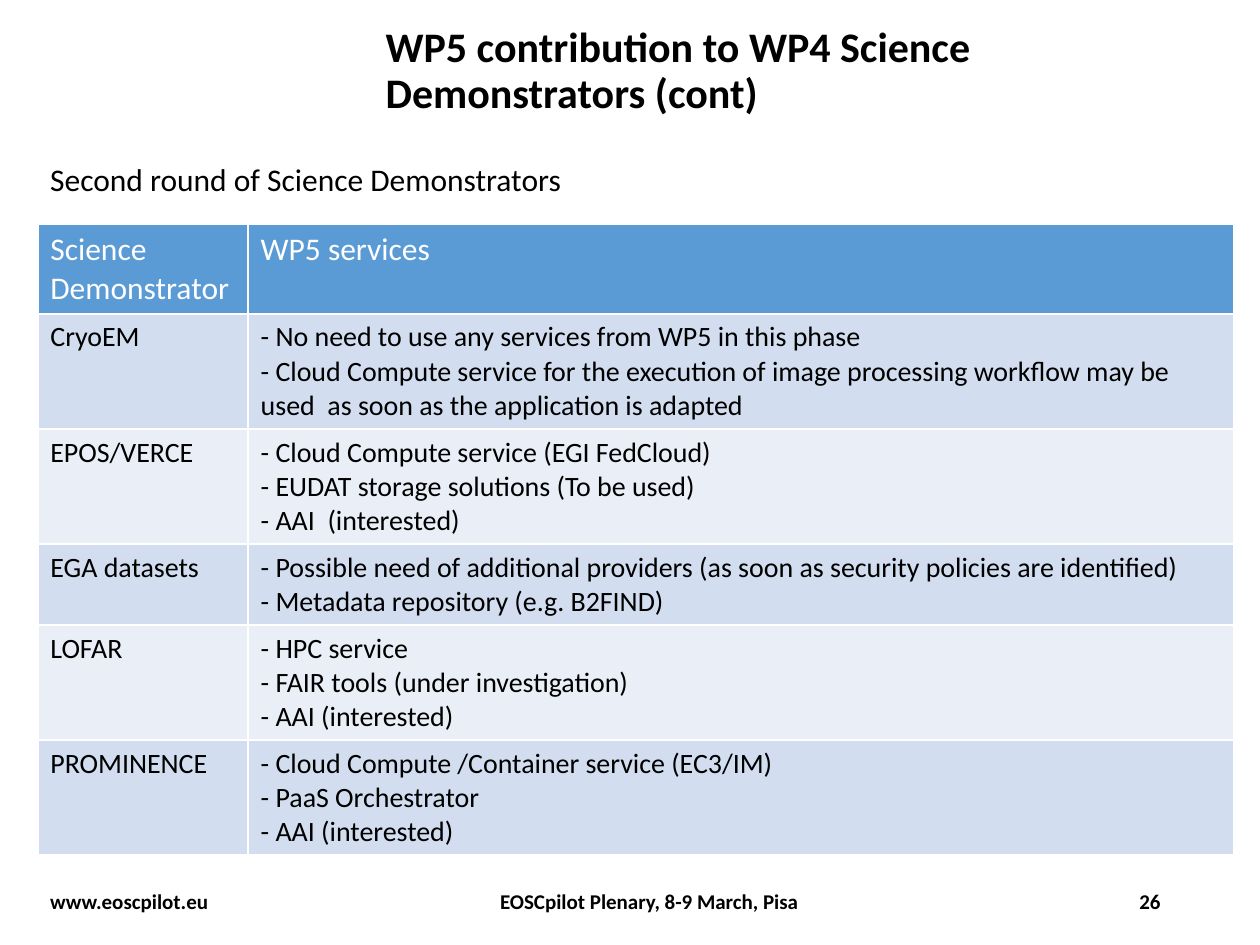
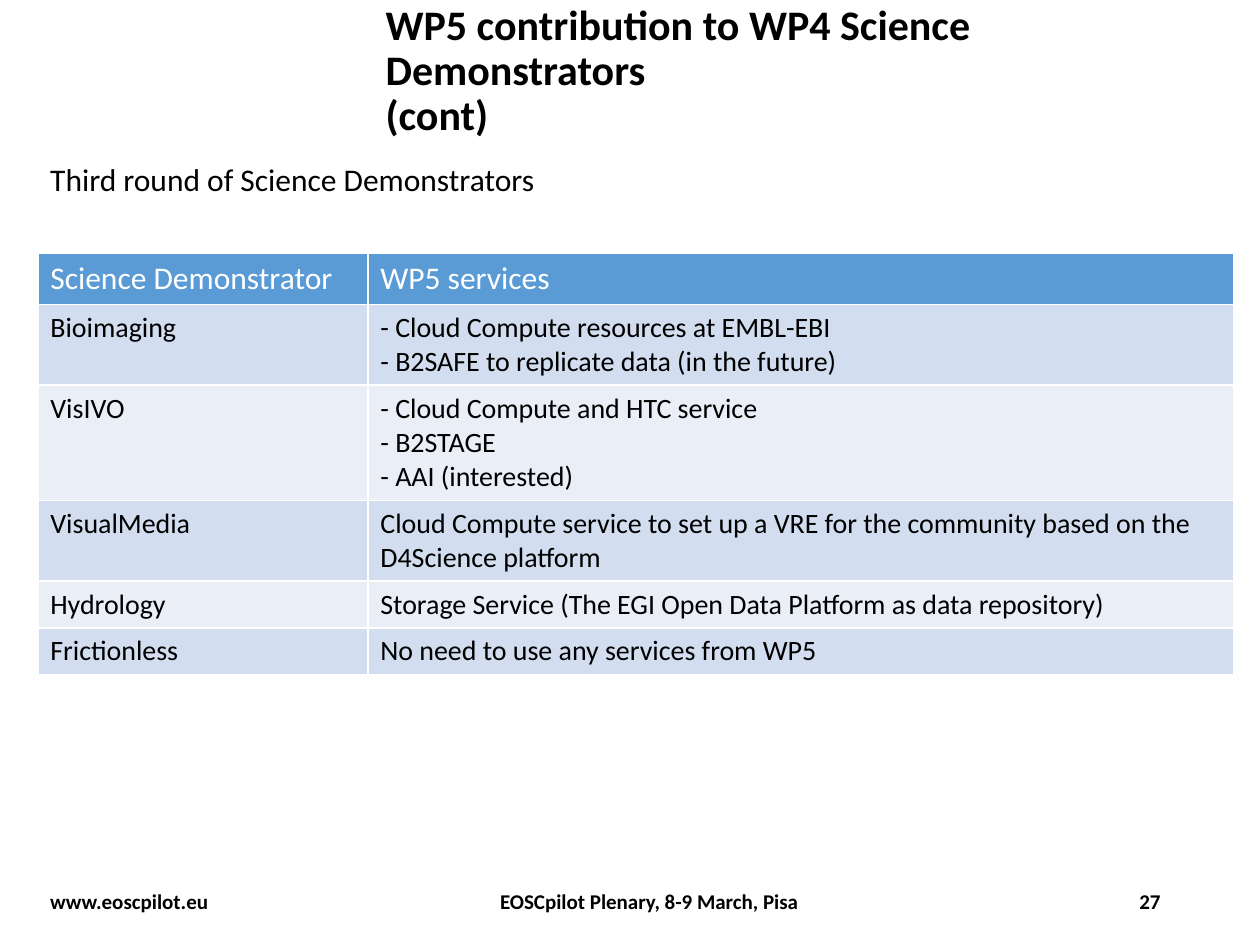
"""Build two slides that list the WP5 services used by the Science Demonstrators."""
import pptx
import pptx.dml.color
import pptx.enum.text
import pptx.util

Pt = pptx.util.Pt
ALIGN = pptx.enum.text.PP_ALIGN
ANCHOR = pptx.enum.text.MSO_ANCHOR

COLOURS = {
    "text": "000000",
    "header_text": "FFFFFF",
    "header": "5B9BD5",
    "odd_row": "D2DEEF",
    "even_row": "EAEFF7",
}
FONT = "Calibri"
LEFT = 21.6
TABLE_WIDTH = 683.3
CELL_MARGINS = 7.2
BODY_LINE = 19.53
HEADER_LINE = 22
TITLE_ONLY_LAYOUT = 5
FIRST_NUMBER = 26
HEADINGS = ["Science Demonstrator", "WP5 services"]

SLIDES = [
    {
        "title": ["WP5 contribution to WP4 Science Demonstrators (cont)"],
        "subtitle": "Second round of Science Demonstrators",
        "table_top": 128.2,
        "name_width": 120.2,
        "header_lines": 2,
        "rows": [
            ("CryoEM", 3, [
                "- No need to use any services from WP5 in this phase",
                "- Cloud Compute service for the execution of image processing "
                "workflow may be used  as soon as the application is adapted"]),
            ("EPOS/VERCE", 3, [
                "- Cloud Compute service (EGI FedCloud)",
                "- EUDAT storage solutions (To be used)",
                "- AAI  (interested)"]),
            ("EGA datasets", 2, [
                "- Possible need of additional providers (as soon as security "
                "policies are identified)",
                "- Metadata repository (e.g. B2FIND)"]),
            ("LOFAR", 3, [
                "- HPC service",
                "- FAIR tools (under investigation)",
                "- AAI (interested)"]),
            ("PROMINENCE", 3, [
                "- Cloud Compute /Container service (EC3/IM)",
                "- PaaS Orchestrator",
                "- AAI (interested)"]),
        ],
    },
    {
        "title": ["WP5 contribution to WP4 Science Demonstrators", "(cont)"],
        "subtitle": "Third round of Science Demonstrators",
        "table_top": 144.7,
        "name_width": 188.6,
        "header_lines": 1,
        "rows": [
            ("Bioimaging", 2, [
                "- Cloud Compute resources at EMBL-EBI",
                "- B2SAFE to replicate data (in the future)"]),
            ("VisIVO", 3, [
                "- Cloud Compute and HTC service",
                "- B2STAGE",
                "- AAI (interested)"]),
            ("VisualMedia", 2, [
                "Cloud Compute service to set up a VRE for the community based "
                "on the D4Science platform"]),
            ("Hydrology", 1, [
                "Storage Service (The EGI Open Data Platform as data repository)"]),
            ("Frictionless", 1, ["No need to use any services from WP5"]),
        ],
    },
]


def colour(name):
    return pptx.dml.color.RGBColor.from_string(COLOURS[name])


def write_text(frame, lines, size=16, bold=False, ink="text",
               align=ALIGN.LEFT, spacing=None):
    frame.word_wrap = True
    for index, line in enumerate(lines):
        para = frame.add_paragraph() if index else frame.paragraphs[0]
        para.alignment = align
        if spacing:
            para.line_spacing = spacing
        span = para.add_run()
        span.text = line
        span.font.name = FONT
        span.font.size = Pt(size)
        span.font.bold = bold
        span.font.color.rgb = colour(ink)


def add_title(page, lines):
    title = page.shapes.title
    title.left, title.top = Pt(213.1), Pt(11.5)
    title.width, title.height = Pt(492.5), Pt(59)
    frame = title.text_frame
    frame.auto_size = pptx.enum.text.MSO_AUTO_SIZE.NONE
    frame.vertical_anchor = ANCHOR.MIDDLE
    write_text(frame, lines, size=24, bold=True, spacing=0.9)


def add_text_box(page, text, left, top, width, anchor=ANCHOR.TOP, **style):
    box = page.shapes.add_textbox(Pt(left), Pt(top), Pt(width), Pt(29))
    box.text_frame.vertical_anchor = anchor
    write_text(box.text_frame, [text], **style)


def add_footer(page, number):
    for text, left, width, align in (
        ("www.eoscpilot.eu", LEFT, 106.6, ALIGN.LEFT),
        ("EOSCpilot Plenary, 8-9 March, Pisa", 170.6, 401, ALIGN.CENTER),
        (str(number), 627.1, 43.2, ALIGN.RIGHT),
    ):
        add_text_box(page, text, left, 500.4, width, anchor=ANCHOR.MIDDLE,
                     size=12, bold=True, align=align)


def fill_cell(cell, lines, fill, **style):
    cell.fill.solid()
    cell.fill.fore_color.rgb = colour(fill)
    write_text(cell.text_frame, lines, **style)


def add_services_table(page, content):
    rows = content["rows"]
    heights = [CELL_MARGINS + HEADER_LINE * content["header_lines"]]
    heights += [CELL_MARGINS + BODY_LINE * count for _, count, _ in rows]
    table = page.shapes.add_table(
        len(heights), len(HEADINGS), Pt(LEFT), Pt(content["table_top"]),
        Pt(TABLE_WIDTH), Pt(sum(heights))).table
    name_width = content["name_width"]
    for column, width in zip(table.columns, (name_width, TABLE_WIDTH - name_width)):
        column.width = Pt(width)
    for row, height in zip(table.rows, heights):
        row.height = Pt(height)
    for column, heading in enumerate(HEADINGS):
        fill_cell(table.cell(0, column), [heading], "header",
                  size=18, ink="header_text")
    for index, (name, _, services) in enumerate(rows, start=1):
        fill = "odd_row" if index % 2 else "even_row"
        fill_cell(table.cell(index, 0), [name], fill)
        fill_cell(table.cell(index, 1), services, fill)


def main():
    deck = pptx.Presentation()
    deck.slide_width, deck.slide_height = Pt(720), Pt(540)
    for number, content in enumerate(SLIDES, start=FIRST_NUMBER):
        page = deck.slides.add_slide(deck.slide_layouts[TITLE_ONLY_LAYOUT])
        add_footer(page, number)
        add_title(page, content["title"])
        add_services_table(page, content)
        add_text_box(page, content["subtitle"], LEFT, 87.8, 344.9, size=18)
    deck.save("out.pptx")


if __name__ == "__main__":
    main()
